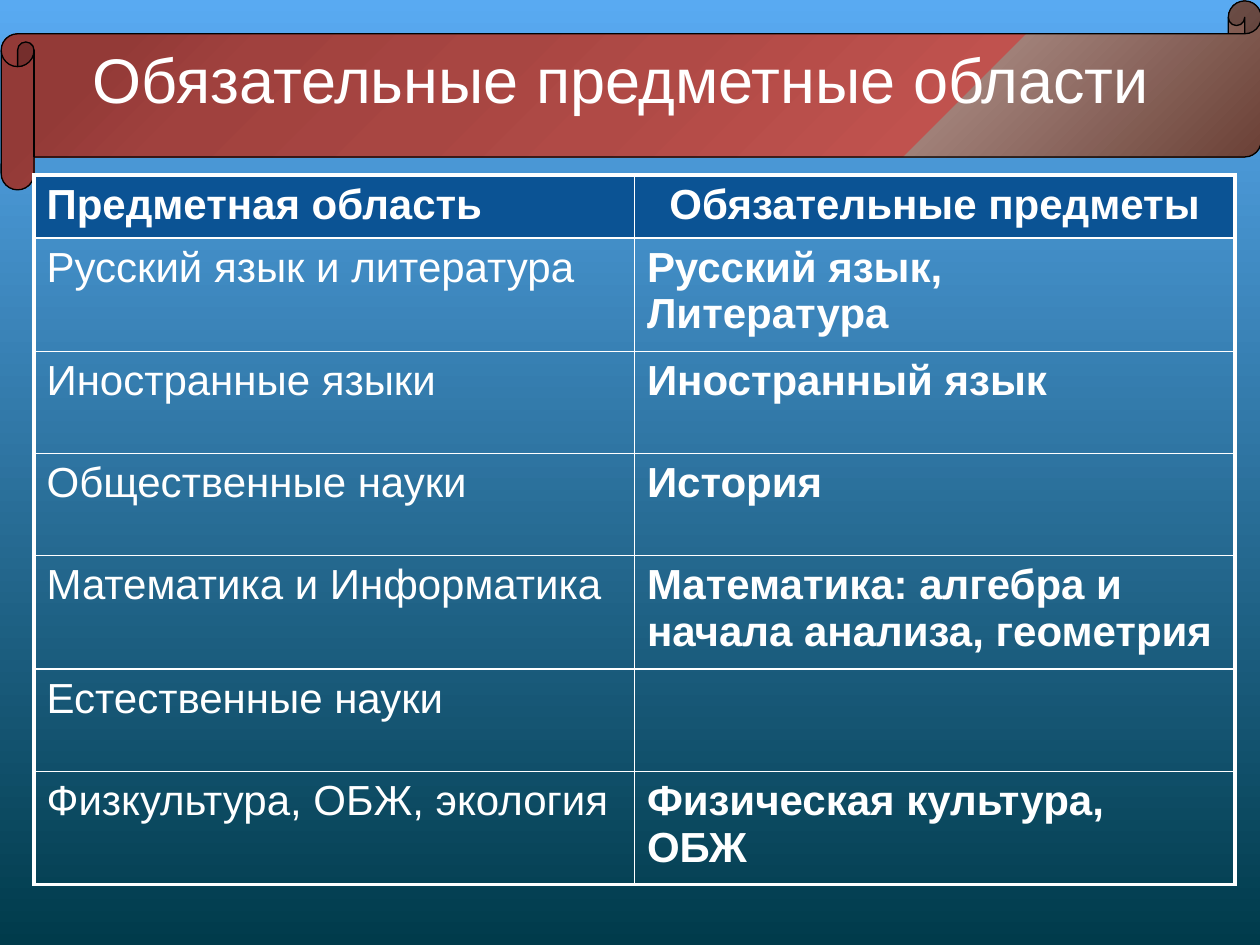
import pptx
import pptx.dml.color
import pptx.enum.shapes
import pptx.enum.text
import pptx.oxml.ns
import pptx.util
from lxml import etree

Pt = pptx.util.Pt
Align = pptx.enum.text.PP_ALIGN
Anchor = pptx.enum.text.MSO_ANCHOR
qn = pptx.oxml.ns.qn

WIDE, HIGH = pptx.util.Inches(10), pptx.util.Inches(7.5)
WHITE = "FFFFFF"
STOPS = [(11, "933A37"), (21, "A0413E"), (38, "A84642"), (50, "B04A46"),
         (73, "C0524E"), (73, "A08078"), (99, "683D33"), (100, "EBDAD4"),
         (100, "7B534A"), (100, "55261C")]
HEAD = ["Предметная область", "Обязательные предметы"]
ROWS = [
    ("Русский язык и литература", ["Русский язык,", "Литература"]),
    ("Иностранные языки", ["Иностранный язык"]),
    ("Общественные науки", ["История"]),
    ("Математика и Информатика",
     ["Математика: алгебра и начала анализа, геометрия"]),
    ("Естественные науки", []),
    ("Физкультура, ОБЖ, экология", ["Физическая культура,", "ОБЖ"]),
]


def rgb(code):
    return pptx.dml.color.RGBColor.from_string(code)


def share(left, top, width, height):
    """Turn percentages of the slide into a box."""
    return [round(part * full / 100) for part, full in
            zip((left, top, width, height), (WIDE, HIGH, WIDE, HIGH))]


def write(frame, lines, size, bold=False, align=Align.LEFT):
    for i, line in enumerate(lines):
        para = frame.paragraphs[0] if i == 0 else frame.add_paragraph()
        para.alignment = align
        run = para.add_run()
        run.text = line
        run.font.name = "Arial"
        run.font.size = Pt(size)
        run.font.bold = bold
        run.font.color.rgb = rgb(WHITE)


def paint(slide):
    fill = slide.background.fill
    fill.gradient()
    fill.gradient_angle = 270
    for stop, code, place in zip(fill.gradient_stops,
                                 ("59AAF2", "003B4B"), (0, 1)):
        stop.color.rgb = rgb(code)
        stop.position = place


def shade(shape, stops):
    """Fill a shape with a circular gradient from its top left corner."""
    shape.fill.gradient()
    grad = shape._element.spPr.find(qn("a:gradFill"))
    for child in list(grad):
        grad.remove(child)
    group = etree.SubElement(grad, qn("a:gsLst"))
    for place, code in stops:
        stop = etree.SubElement(group, qn("a:gs"), pos=str(place * 1000))
        etree.SubElement(stop, qn("a:srgbClr"), val=code)
    ring = etree.SubElement(grad, qn("a:path"))
    ring.set("path", "circle")
    etree.SubElement(ring, qn("a:fillToRect"), r="100000", b="100000")


def banner(slide, box, title):
    # Scroll
    kind = pptx.enum.shapes.MSO_SHAPE.HORIZONTAL_SCROLL
    scroll = slide.shapes.add_shape(kind, *box)
    scroll.shadow.inherit = False
    scroll.adjustments[0] = 0.174
    shade(scroll, STOPS)
    scroll.line.color.rgb = rgb("000000")
    scroll.line.width = Pt(0)
    # Title, a little above the middle of the scroll
    left, top, width, height = box
    label = slide.shapes.add_textbox(left + round(width * 0.042), 0,
                                     round(width * 0.9),
                                     round(height * 0.83))
    frame = label.text_frame
    frame.word_wrap = True
    frame.vertical_anchor = Anchor.MIDDLE
    write(frame, [title], 36, align=Align.CENTER)


def edge(cell, sides):
    """Draw the cell's borders; sides maps L, R, T, B to points."""
    props = cell._tc.get_or_add_tcPr()
    for side, width in sides.items():
        line = etree.SubElement(props, qn("a:ln" + side), w=str(Pt(width)))
        fill = etree.SubElement(line, qn("a:solidFill"))
        etree.SubElement(fill, qn("a:srgbClr"), val=WHITE)


def grid(slide, box):
    count = len(ROWS) + 1
    table = slide.shapes.add_table(count, 2, *box).table
    table.first_row = table.horz_banding = False
    # The header is half as tall as a body row
    unit = box[3] / (2 * count - 1)
    for r, row in enumerate(table.rows):
        row.height = round(unit * (2 if r else 1))
    lines = [[[text] for text in HEAD]] + [[[a], b] for a, b in ROWS]
    for r, pair in enumerate(lines):
        for c, texts in enumerate(pair):
            cell = table.cell(r, c)
            # Thick outer frame, thin inner lines
            outer = {"L": c == 0, "R": c == 1,
                     "T": r == 0, "B": r == count - 1}
            edge(cell, {s: 2.25 if out else 1 for s, out in outer.items()})
            if r == 0:
                cell.fill.solid()
                cell.fill.fore_color.rgb = rgb("0B5394")
            else:
                cell.fill.background()
            middle = r == 0 and c == 1
            write(cell.text_frame, texts, 24, r == 0 or c == 1,
                  Align.CENTER if middle else Align.LEFT)


def main():
    deck = pptx.Presentation()
    deck.slide_width, deck.slide_height = WIDE, HIGH
    slide = deck.slides.add_slide(deck.slide_layouts[6])
    paint(slide)
    banner(slide, share(0.1, 0.1, 100, 20), "Обязательные предметные области")
    grid(slide, share(2.7, 18.5, 95.3, 70.3))
    deck.save("out.pptx")


if __name__ == "__main__":
    main()
